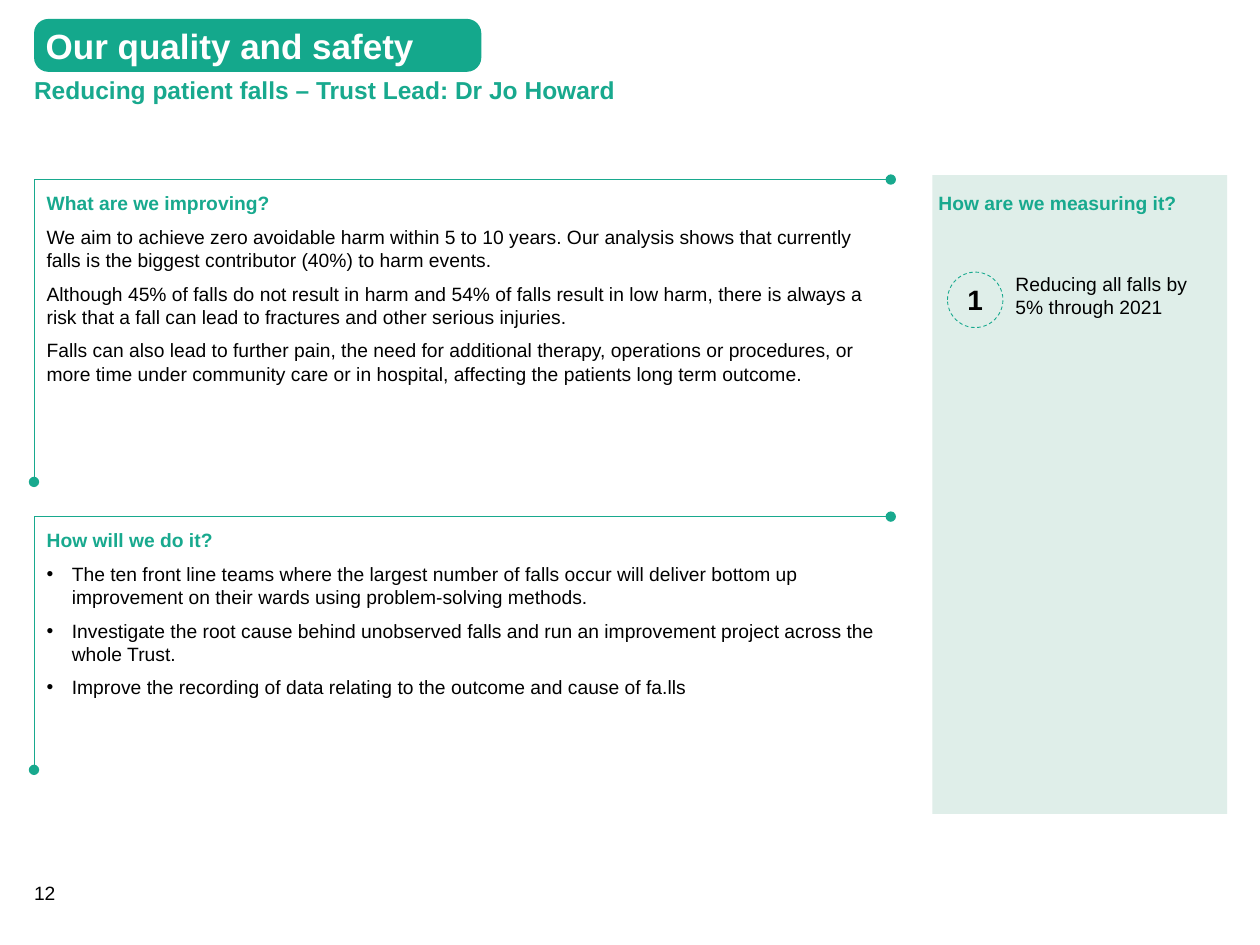
from dataclasses import dataclass

from lxml.etree import SubElement
from pptx import Presentation
from pptx.dml.color import RGBColor as Color
from pptx.enum.dml import MSO_LINE_DASH_STYLE as Dash
from pptx.enum.shapes import MSO_AUTO_SHAPE_TYPE as Preset
from pptx.enum.text import MSO_VERTICAL_ANCHOR as Anchor
from pptx.enum.text import PP_PARAGRAPH_ALIGNMENT as Align
from pptx.oxml.ns import qn
from pptx.util import Pt


@dataclass(frozen=True)
class Theme:
    font: str = "Arial"
    green: Color = Color.from_string("18A98E")
    banner: Color = Color.from_string("14A88C")
    pale: Color = Color.from_string("DFEEE9")
    black: Color = Color.from_string("000000")
    white: Color = Color.from_string("FFFFFF")
    body: float = 11
    subtitle: float = 14
    number: float = 16
    title: float = 20
    line: float = 0.5


THEME = Theme()
LEFT = 19.44
FRAME_WIDTH = 489.6

IMPROVING = [
    "We aim to achieve zero avoidable harm within 5 to 10 years. Our analysis shows that "
    "currently falls is the biggest contributor (40%) to harm events.",
    "Although 45% of falls do not result in harm and 54% of falls result in low harm, there is "
    "always a risk that a fall can lead to fractures and other serious injuries.",
    "Falls can also lead to further pain, the need for additional therapy, operations or "
    "procedures, or more time under community care or in hospital, affecting the patients "
    "long term outcome.",
]
ACTIONS = [
    "The ten front line teams where the largest number of falls occur will deliver bottom up "
    "improvement on their wards using problem-solving methods.",
    "Investigate the root cause behind unobserved falls and run an improvement project across "
    "the whole Trust.",
    "Improve the recording of data relating to the outcome and cause of fa.lls",
]


def set_frame(box, insets=(0, 0), anchor=Anchor.TOP):
    frame = box.text_frame
    frame.word_wrap = True
    frame.vertical_anchor = anchor
    frame.margin_left = frame.margin_right = Pt(insets[0])
    frame.margin_top = frame.margin_bottom = Pt(insets[1])


def write(box, text, size=THEME.body, color=THEME.black, bold=False,
          align=Align.LEFT, after=0, bullet=False):
    frame = box.text_frame
    para = frame.add_paragraph() if frame.text else frame.paragraphs[0]
    para.alignment = align
    para.space_after = Pt(after)
    if bullet:
        props = para._p.get_or_add_pPr()
        props.set("marL", str(Pt(14.4)))
        props.set("indent", str(-Pt(14.4)))
        SubElement(props, qn("a:buFont"), typeface=THEME.font)
        SubElement(props, qn("a:buChar"), char="•")
    span = para.add_run()
    span.text = text
    span.font.name = THEME.font
    span.font.size = Pt(size)
    span.font.bold = bold
    span.font.color.rgb = color


def add_text_box(page, left, top, width, height, **frame_format):
    box = page.shapes.add_textbox(Pt(left), Pt(top), Pt(width), Pt(height))
    set_frame(box, **frame_format)
    return box


def add_panel(page, preset, left, top, width, height, fill, **frame_format):
    panel = page.shapes.add_shape(preset, Pt(left), Pt(top), Pt(width), Pt(height))
    panel.shadow.inherit = False
    panel.fill.solid()
    panel.fill.fore_color.rgb = fill
    panel.line.fill.background()
    set_frame(panel, **frame_format)
    return panel


def add_corner_line(page, top, height):
    builder = page.shapes.build_freeform(Pt(LEFT), Pt(top + height))
    builder.add_line_segments(
        [(Pt(LEFT), Pt(top)), (Pt(LEFT + FRAME_WIDTH), Pt(top))], close=False)
    corner = builder.convert_to_shape()
    corner.shadow.inherit = False
    corner.fill.background()
    corner.line.color.rgb = THEME.green
    corner.line.width = Pt(THEME.line)
    outline = corner.line._get_or_add_ln()
    for end in ("a:headEnd", "a:tailEnd"):
        SubElement(outline, qn(end), type="oval")


def add_section(page, top, frame_height, text_height, heading, texts, bullet=False):
    box = add_text_box(page, 26.64, top + 6.84, 474.48, text_height)
    write(box, heading, color=THEME.green, bold=True, after=6)
    for text in texts:
        write(box, text, after=6, bullet=bullet)
    add_corner_line(page, top, frame_height)


def add_measures(page):
    add_panel(page, Preset.RECTANGLE, 532.8, 100.08, 168.48, 365.04, THEME.pale)
    heading = add_text_box(page, 529.2, 105.84, 156.24, 20.88, insets=(7.2, 3.6))
    write(heading, "How are we measuring it?", color=THEME.green, bold=True)

    badge = add_panel(page, Preset.OVAL, 541.44, 155.52, 31.68, 31.68, THEME.pale,
                      anchor=Anchor.MIDDLE)
    badge.line.color.rgb = THEME.green
    badge.line.width = Pt(THEME.line)
    badge.line.dash_style = Dash.DASH
    write(badge, "1", size=THEME.number, bold=True, align=Align.CENTER)

    target = add_panel(page, Preset.RECTANGLE, 580.32, 155.52, 110.16, 26.64, THEME.pale)
    write(target, "Reducing all falls by 5% through 2021", after=6)


def add_header(page):
    subtitle = add_text_box(page, LEFT, 42.48, 519.84, 17.28, anchor=Anchor.MIDDLE)
    write(subtitle, "Reducing patient falls – Trust Lead: Dr Jo Howard",
          size=THEME.subtitle, color=THEME.green, bold=True)
    banner = add_panel(page, Preset.ROUNDED_RECTANGLE, LEFT, 10.8, 255.6, 30.24,
                       THEME.banner, insets=(4.32, 4.32), anchor=Anchor.MIDDLE)
    banner.adjustments[0] = 0.27
    write(banner, "Our quality and safety", size=THEME.title, color=THEME.white, bold=True)


def main():
    deck = Presentation()
    deck.slide_width, deck.slide_height = Pt(720), Pt(540)
    page = deck.slides.add_slide(deck.slide_layouts[6])
    add_header(page)
    add_section(page, 102.6, 172.8, 111.6, "What are we improving?", IMPROVING)
    add_section(page, 295.2, 144.72, 97.92, "How will we do it?", ACTIONS, bullet=True)
    add_measures(page)
    write(add_text_box(page, LEFT, 503.28, 39.6, 13.68), "12")
    deck.save("out.pptx")


if __name__ == "__main__":
    main()
